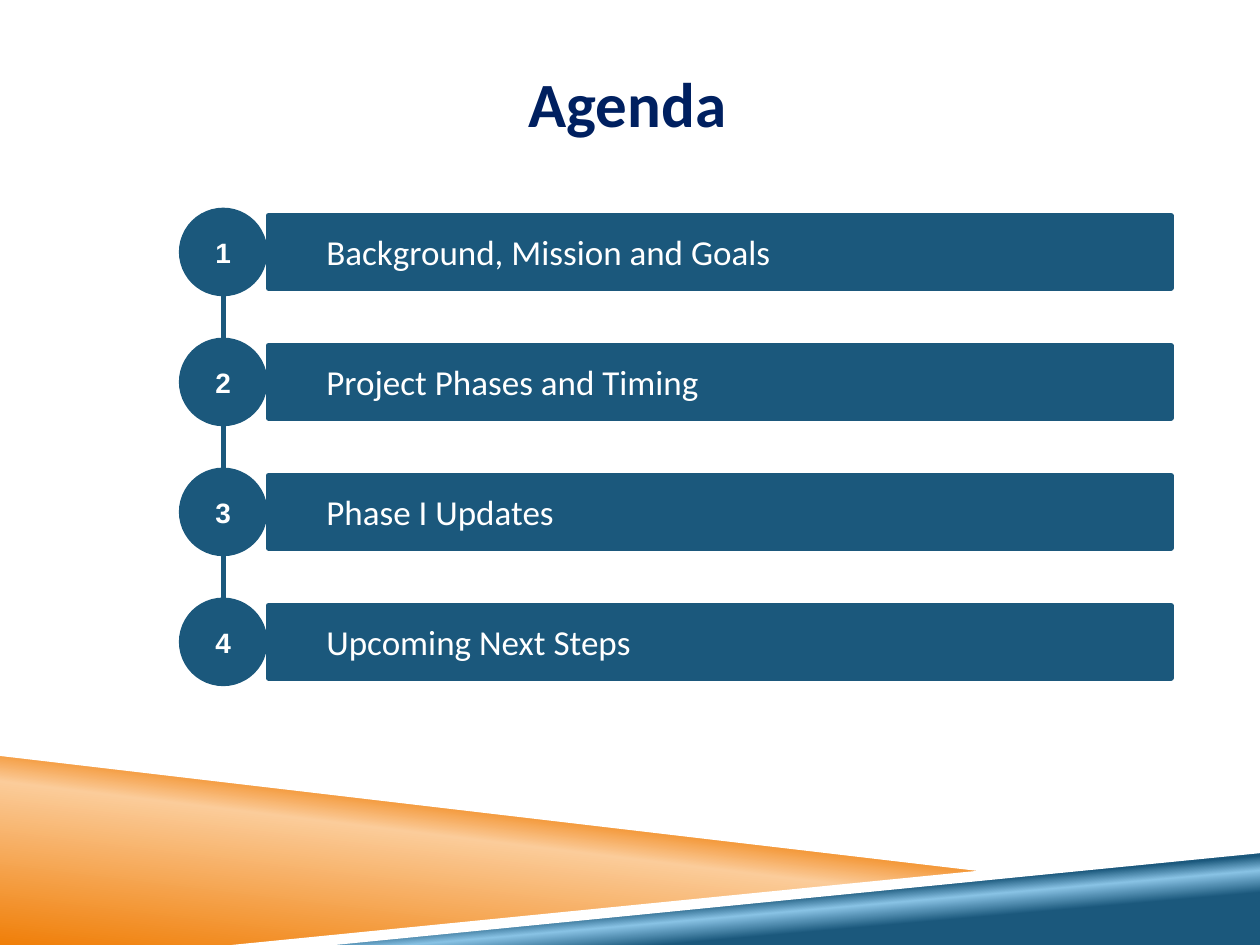
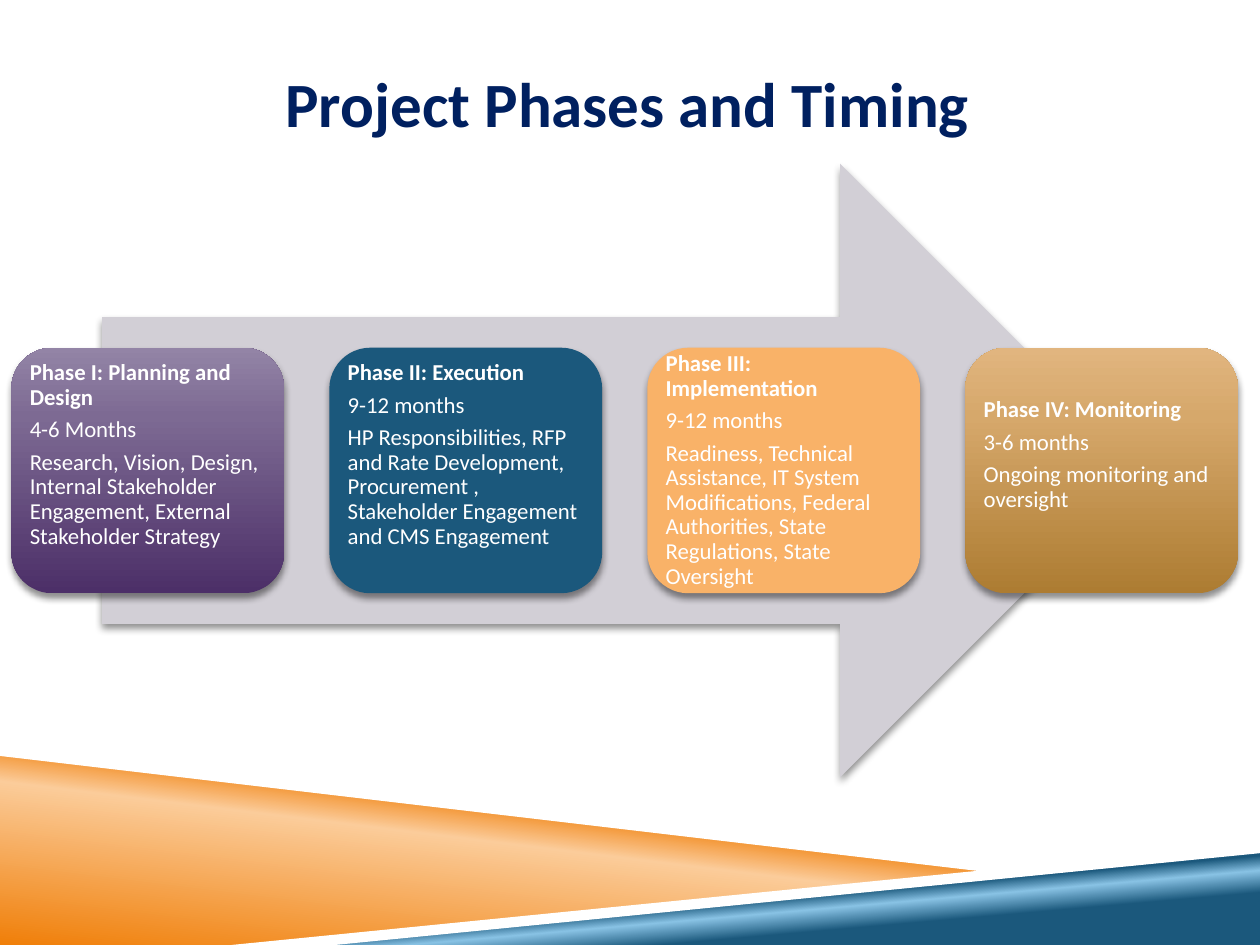
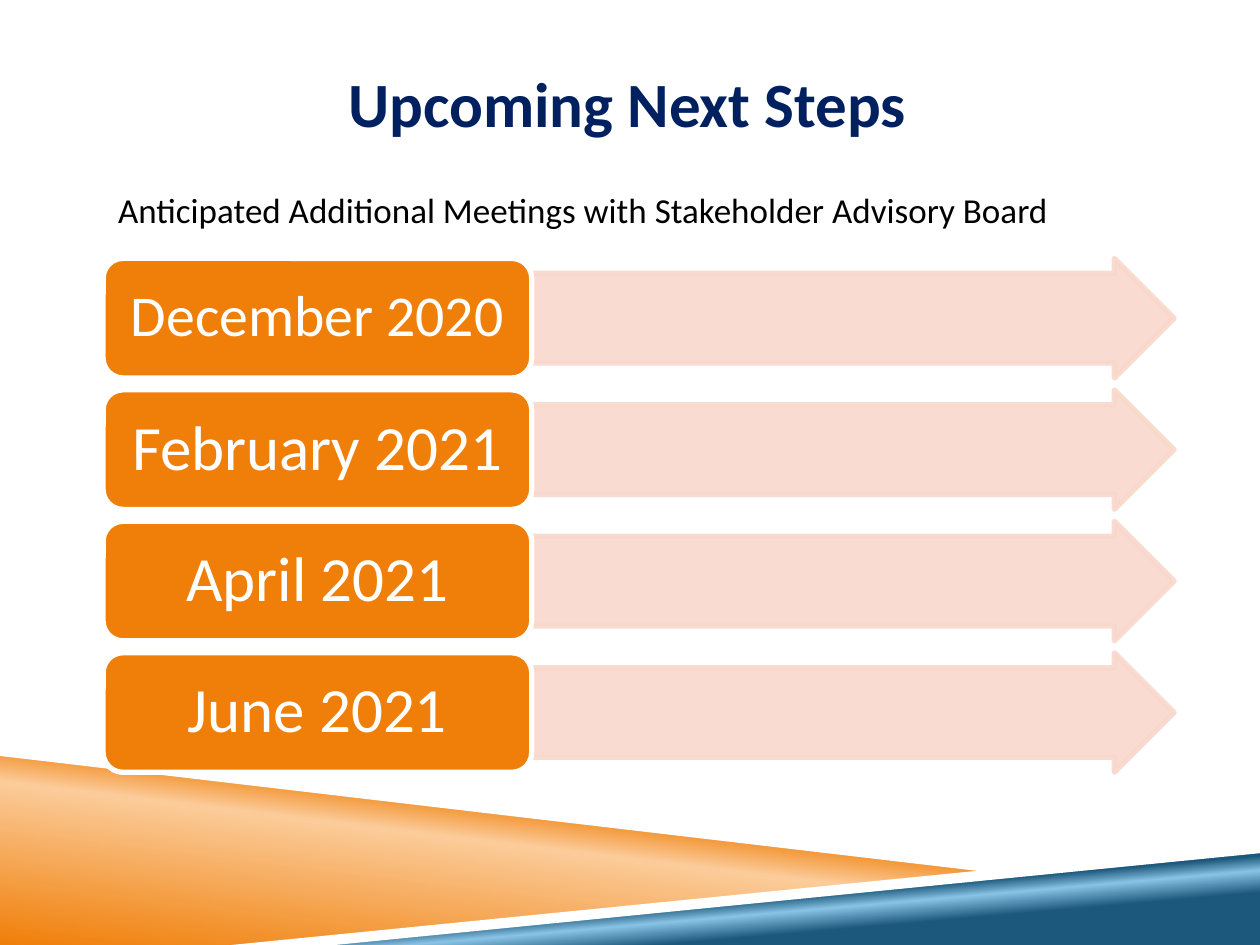
from dataclasses import dataclass

from lxml import etree
from pptx import Presentation
from pptx.dml.color import RGBColor
from pptx.enum.shapes import MSO_CONNECTOR, MSO_SHAPE
from pptx.enum.text import MSO_ANCHOR, PP_ALIGN
from pptx.oxml import parse_xml
from pptx.oxml.ns import nsdecls, qn
from pptx.util import Cm, Pt

LEFT, CENTER = PP_ALIGN.LEFT, PP_ALIGN.CENTER
TOP, MIDDLE = MSO_ANCHOR.TOP, MSO_ANCHOR.MIDDLE
RECTANGLE, ROUNDED = MSO_SHAPE.RECTANGLE, MSO_SHAPE.ROUNDED_RECTANGLE
OVAL, ARROW = MSO_SHAPE.OVAL, MSO_SHAPE.RIGHT_ARROW
STRAIGHT = MSO_CONNECTOR.STRAIGHT


@dataclass(frozen=True)
class Theme:
    font: str = "Calibri"
    number_font: str = "Arial"
    navy: str = "002060"
    blue: str = "1B587C"
    orange: str = "F07F09"
    peach: str = "F9B268"
    blush: str = "F9D8CC"
    grey: str = "D2CFD6"
    white: str = "FFFFFF"
    black: str = "000000"
    title_size: float = 36
    body_size: float = 20
    number_size: float = 16
    card_size: float = 13
    line_width: float = 3


THEME = Theme()
WIDTH, HEIGHT = 25.4, 19.05

ORANGE_SWEEP = (277, [(0, THEME.orange), (52, "FBCC9A"), (66, THEME.orange)])
BLUE_SWEEP = (265, [(28, THEME.blue), (40, "89C3E5"), (48, THEME.blue)])
PURPLE_FADE = (270, [(0, "4C2F68"), (72, "7D6A93"), (100, "9384A6")])
BRONZE_FADE = (270, [(0, "AD7C32"), (72, "D6A86B"), (100, "E1B57F")])

FOOTER_BANDS = [
    (ORANGE_SWEEP, [(0, 15.16), (20.12, 17.58), (5.08, HEIGHT), (0, HEIGHT)]),
    (BLUE_SWEEP, [(5.03, HEIGHT), (WIDTH, 17.07), (WIDTH, HEIGHT)]),
    (THEME.white, [(0, 15.04), (0, 15.24), (20.07, 17.6), (21.13, 17.53)]),
    (THEME.white, [(WIDTH, 16.99), (4.67, HEIGHT), (6.76, HEIGHT), (WIDTH, 17.2)]),
]

AGENDA = [
    "Background, Mission and Goals",
    "Project Phases and Timing",
    "Phase I Updates",
    "Upcoming Next Steps",
]

BLANK_LINE = 0.62
PHASES = [
    (PURPLE_FADE, BLANK_LINE, [
        "Phase I: Planning and Design",
        "4-6 Months",
        "Research, Vision, Design, Internal Stakeholder Engagement, "
        "External Stakeholder Strategy",
    ]),
    (THEME.blue, BLANK_LINE, [
        "Phase II: Execution",
        "9-12 months",
        "HP Responsibilities, RFP and Rate Development, Procurement , "
        "Stakeholder Engagement and CMS Engagement",
    ]),
    (THEME.peach, 0, [
        "Phase III: Implementation",
        "9-12 months",
        "Readiness, Technical Assistance, IT System Modifications, "
        "Federal Authorities, State Regulations, State Oversight",
    ]),
    (BRONZE_FADE, BLANK_LINE, [
        "Phase IV: Monitoring",
        "3-6 months",
        "Ongoing monitoring and oversight",
    ]),
]

MEETINGS_NOTE = "Anticipated Additional Meetings with Stakeholder Advisory Board"
MEETINGS = [("December 2020", 33), ("February 2021", 36), ("April 2021", 36), ("June 2021", 36)]


def color(code):
    return RGBColor.from_string(code)


def write_text(shape, paragraphs, size=THEME.body_size, font=THEME.font, ink=THEME.white,
               bold_count=0, align=LEFT, anchor=MIDDLE, insets=(0.25, 0.13, 0.25, 0.13),
               line_spacing=None, space_after=None):
    frame = shape.text_frame
    frame.word_wrap = True
    frame.vertical_anchor = anchor
    frame.margin_left, frame.margin_top, frame.margin_right, frame.margin_bottom = map(Cm, insets)
    for index, text in enumerate(paragraphs):
        paragraph = frame.add_paragraph() if index else frame.paragraphs[0]
        paragraph.alignment = align
        paragraph.line_spacing = line_spacing
        if space_after:
            paragraph.space_after = Pt(space_after)
        run = paragraph.add_run()
        run.text = text
        run.font.name = font
        run.font.size = Pt(size)
        run.font.bold = index < bold_count
        run.font.color.rgb = color(ink)


def paint_gradient(shape, angle, stops):
    shape.fill.background()
    properties = shape.element.spPr
    marks = "".join(
        f'<a:gs pos="{position * 1000}"><a:srgbClr val="{code}"/></a:gs>'
        for position, code in stops
    )
    gradient = parse_xml(
        f'<a:gradFill {nsdecls("a")} rotWithShape="1"><a:gsLst>{marks}</a:gsLst>'
        f'<a:lin ang="{angle * 60000}" scaled="0"/></a:gradFill>'
    )
    properties.replace(properties.find(qn("a:noFill")), gradient)


def style_shape(shape, fill, line=None, shadow=False, opacity=None):
    if isinstance(fill, tuple):
        paint_gradient(shape, *fill)
    else:
        shape.fill.solid()
        shape.fill.fore_color.rgb = color(fill)
    if line:
        shape.line.color.rgb = color(line)
        shape.line.width = Pt(THEME.line_width)
    else:
        shape.line.fill.background()
    properties = shape.element.spPr
    if opacity:
        for code in properties.iter(qn("a:srgbClr")):
            etree.SubElement(code, qn("a:alpha"), val=str(opacity * 1000))
    shape.shadow.inherit = False
    if shadow:
        properties.find(qn("a:effectLst")).append(parse_xml(
            f'<a:outerShdw {nsdecls("a")} blurRad="{Pt(4)}" dist="{Pt(3)}" dir="5400000" '
            f'rotWithShape="0"><a:srgbClr val="{THEME.black}"><a:alpha val="43000"/>'
            '</a:srgbClr></a:outerShdw>'
        ))


def add_preset(slide, preset, box, fill, **style):
    shape = slide.shapes.add_shape(preset, *map(Cm, box))
    style_shape(shape, fill, **style)
    return shape


def add_label(slide, box, text, **text_format):
    write_text(slide.shapes.add_textbox(*map(Cm, box)), [text], **text_format)


def add_line(slide, start, end, oval_end=False):
    connector = slide.shapes.add_connector(STRAIGHT, *map(Cm, start + end))
    connector.line.color.rgb = color(THEME.blue)
    connector.line.width = Pt(THEME.line_width)
    if oval_end:
        etree.SubElement(connector.line._get_or_add_ln(), qn("a:tailEnd"), type="oval")
    etree.SubElement(connector.element.spPr, qn("a:effectLst"))


def add_base_slide(presentation, title):
    slide = presentation.slides.add_slide(presentation.slide_layouts[6])
    for fill, points in FOOTER_BANDS:
        corners = [(Cm(x), Cm(y)) for x, y in points]
        builder = slide.shapes.build_freeform(*corners[0])
        builder.add_line_segments(corners[1:], close=True)
        style_shape(builder.convert_to_shape(), fill)
    add_label(slide, (1.7, 0.84, 21.9, 2.44), title, size=THEME.title_size, ink=THEME.navy,
              bold_count=1, align=CENTER, insets=(0, 0.13, 0, 0.13))
    return slide


def build_agenda(presentation):
    slide = add_base_slide(presentation, "Agenda")
    diameter, circle_left, first_top, pitch = 1.68, 3.66, 4.24, 2.62
    bar_left, bar_width, bar_height = 5.41, 18.2, 1.46
    center_x = circle_left + diameter / 2
    last_top = first_top + pitch * (len(AGENDA) - 1)
    add_line(slide, (center_x, first_top + diameter), (center_x, last_top))
    for index, topic in enumerate(AGENDA):
        top = first_top + index * pitch
        center_y = top + diameter / 2
        bar = add_preset(slide, RECTANGLE, (bar_left, center_y - bar_height / 2, bar_width, bar_height),
                         THEME.blue, line=THEME.blue)
        write_text(bar, [topic], insets=(1.17, 0.08, 0.08, 0.08))
        circle = add_preset(slide, OVAL, (circle_left, top, diameter, diameter),
                            THEME.blue, line=THEME.blue)
        write_text(circle, [str(index + 1)], size=THEME.number_size, font=THEME.number_font,
                   bold_count=1, align=CENTER, insets=(0.2,) * 4)
        add_line(slide, (circle_left + diameter, center_y), (6.05, center_y), oval_end=True)


def build_phases(presentation):
    slide = add_base_slide(presentation, "Project Phases and Timing")
    add_preset(slide, ARROW, (2.06, 3.3, 21.06, 12.37), THEME.grey, shadow=True)
    for index, (fill, extra_bottom, lines) in enumerate(PHASES):
        card = add_preset(slide, ROUNDED, (0.23 + index * 6.41, 7.01, 5.5, 4.95), fill, shadow=True)
        write_text(card, lines, size=THEME.card_size, bold_count=1, line_spacing=0.9,
                   space_after=4.5, insets=(0.13, 0.13, 0.13, 0.13 + extra_bottom))


def build_next_steps(presentation):
    slide = add_base_slide(presentation, "Upcoming Next Steps")
    add_label(slide, (2.13, 3.68, 21.39, 1.12), MEETINGS_NOTE, ink=THEME.black, anchor=TOP)
    left, card_width, arrow_width, height = 2.08, 8.64, 12.95, 2.41
    for index, (month, size) in enumerate(MEETINGS):
        top = 5.21 + index * 2.65
        arrow = add_preset(slide, ARROW, (left + card_width, top, arrow_width, height),
                           THEME.blush, line=THEME.blush, opacity=90)
        arrow.adjustments[0] = 0.75
        card = add_preset(slide, ROUNDED, (left, top, card_width, height),
                          THEME.orange, line=THEME.white)
        write_text(card, [month], size=size, align=CENTER, line_spacing=0.9,
                   insets=(0.36, 0.18, 0.36, 0.18))


def main():
    presentation = Presentation()
    presentation.slide_width, presentation.slide_height = Cm(WIDTH), Cm(HEIGHT)
    build_agenda(presentation)
    build_phases(presentation)
    build_next_steps(presentation)
    presentation.save("out.pptx")


if __name__ == "__main__":
    main()
